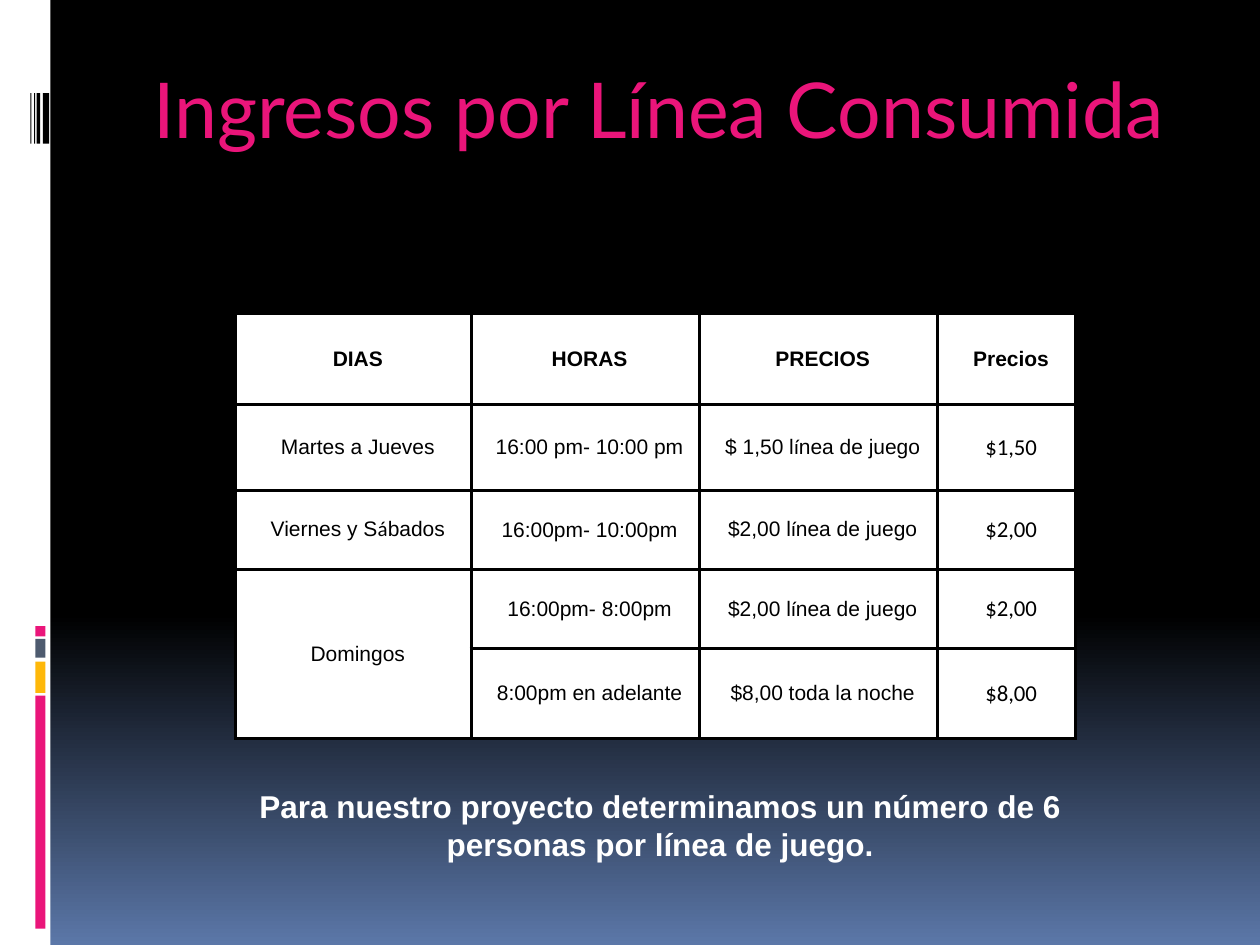
from itertools import groupby

from lxml.etree import SubElement
from copy import deepcopy
from pptx import Presentation
from pptx.dml.color import RGBColor
from pptx.enum.shapes import MSO_SHAPE
from pptx.enum.text import MSO_ANCHOR, PP_ALIGN
from pptx.oxml import parse_xml
from pptx.oxml.ns import nsdecls, qn
from pptx.util import Inches, Pt

COLORS = {
    "black": "000000",
    "white": "FFFFFF",
    "pink": "EA157A",
    "yellow": "FEB80A",
    "slate": "4E5B6F",
    "blue": "5B77A8",
}
FORMATS = {
    "title": {"name": "Lato", "size": Pt(44), "color": "pink"},
    "note": {"name": "Arial", "size": Pt(18), "bold": True, "color": "white"},
    "header": {"name": "Arial", "size": Pt(12), "bold": True, "color": "black"},
    "body": {"name": "Arial", "size": Pt(12), "bold": False, "color": "black"},
    "accent": {"name": "Calibri", "size": Pt(12), "bold": False, "color": "black"},
    "price": {"name": "Calibri", "size": Pt(13), "bold": False, "color": "black"},
}
PRICE_ROWS = [
    ["DIAS", "HORAS", "PRECIOS", "Precios"],
    ["Martes a Jueves", "16:00 pm- 10:00 pm", "$ 1,50 línea de juego", "$1,50"],
    ["Viernes y Sábados", "16:00pm- 10:00pm", "$2,00 línea de juego", "$2,00"],
    ["Domingos", "16:00pm- 8:00pm", "$2,00 línea de juego", "$2,00"],
    ["", "8:00pm en adelante", "$8,00 toda la noche", "$8,00"],
]
COLUMN_WIDTHS = [1.87, 1.81, 1.89, 1.1]
ROW_HEIGHTS = [0.72, 0.68, 0.63, 0.63, 0.71]


def rgb(name):
    return RGBColor.from_string(COLORS[name])


class SlideBuilder:
    """Holds the text formats and the slide being built."""

    def __init__(self, slide, formats):
        self.slide = slide
        self.formats = formats

    def background(self, stops, angle):
        fill = self.slide.background.fill
        fill.gradient()
        fill.gradient_angle = angle
        stop_list = self.slide.element.find(".//" + qn("a:gsLst"))
        while len(stop_list) < len(stops):
            stop_list.append(deepcopy(stop_list[-1]))
        for stop, (position, color) in zip(fill.gradient_stops, stops):
            stop.position = position
            stop.color.rgb = rgb(color)

    def bar(self, left, top, width, height, color):
        box = [Inches(value) for value in (left, top, width, height)]
        shape = self.slide.shapes.add_shape(MSO_SHAPE.RECTANGLE, *box)
        shape.shadow.inherit = False
        shape.fill.solid()
        shape.fill.fore_color.rgb = rgb(color)
        shape.line.fill.background()

    def run(self, paragraph, text, style):
        run = paragraph.add_run()
        run.text = text
        for key, value in self.formats[style].items():
            if key == "color":
                run.font.color.rgb = rgb(value)
            else:
                setattr(run.font, key, value)

    def text(self, left, top, width, height, text, style):
        box = [Inches(value) for value in (left, top, width, height)]
        frame = self.slide.shapes.add_textbox(*box).text_frame
        frame.word_wrap = True
        frame.margin_left = frame.margin_right = Inches(0.15)
        paragraph = frame.paragraphs[0]
        paragraph.alignment = PP_ALIGN.CENTER
        self.run(paragraph, text, style)

    def cell(self, cell, text, style):
        cell.vertical_anchor = MSO_ANCHOR.MIDDLE
        cell.fill.solid()
        cell.fill.fore_color.rgb = rgb("white")
        properties = cell._tc.get_or_add_tcPr()
        for index, side in enumerate(("lnL", "lnR", "lnT", "lnB")):
            line = parse_xml(f'<a:{side} {nsdecls("a")} w="{Pt(2)}"/>')
            fill = SubElement(line, qn("a:solidFill"))
            SubElement(fill, qn("a:srgbClr"), val=COLORS["black"])
            properties.insert(index, line)

        paragraph = cell.text_frame.paragraphs[0]
        paragraph.alignment = PP_ALIGN.CENTER
        indents = paragraph._p.get_or_add_pPr()
        indents.set("marL", str(Inches(0.45)))
        indents.set("indent", str(Inches(-0.38)))
        # Accented letters of the body use their own font
        for accented, letters in groupby(text, key=lambda letter: letter in "áí"):
            self.run(paragraph, "".join(letters), "accent" if accented else style)

    def table(self, left, top, rows, widths, heights):
        box = [Inches(value) for value in (left, top, sum(widths), sum(heights))]
        table = self.slide.shapes.add_table(len(rows), len(widths), *box).table
        for column, width in zip(table.columns, widths):
            column.width = Inches(width)
        for row, height in zip(table.rows, heights):
            row.height = Inches(height)
        last_column = len(widths) - 1
        for i, row in enumerate(rows):
            for j, text in enumerate(row):
                style = "header" if i == 0 else "price" if j == last_column else "body"
                self.cell(table.cell(i, j), text, style)
        return table


def main():
    presentation = Presentation()
    presentation.slide_width = Inches(10)
    presentation.slide_height = Inches(7.5)
    slide = presentation.slides.add_slide(presentation.slide_layouts[6])
    builder = SlideBuilder(slide, FORMATS)

    # Background and left band
    builder.background([(0, "black"), (0.65, "black"), (1, "blue")], 270)
    builder.bar(0, 0, 0.4, 7.5, "white")

    # Coloured blocks
    for top, height, color in [
        (5.52, 1.85, "pink"),
        (5.25, 0.25, "yellow"),
        (5.07, 0.15, "slate"),
        (4.97, 0.08, "pink"),
    ]:
        builder.bar(0.28, top, 0.08, height, color)

    # Black stripes
    for left, width in [(0.34, 0.05), (0.29, 0.03), (0.27, 0.01), (0.24, 0.01)]:
        builder.bar(left, 0.74, width, 0.4, "black")

    # Title, price table and closing note
    builder.text(0.98, 0.44, 8.5, 1.57, "Ingresos por Línea Consumida", "title")
    table = builder.table(1.87, 2.49, PRICE_ROWS, COLUMN_WIDTHS, ROW_HEIGHTS)
    table.cell(3, 0).merge(table.cell(4, 0))
    builder.text(
        1.38, 6.2, 7.72, 0.7,
        "Para nuestro proyecto determinamos un número de 6 personas por línea de juego.",
        "note",
    )

    presentation.save("out.pptx")


if __name__ == "__main__":
    main()
